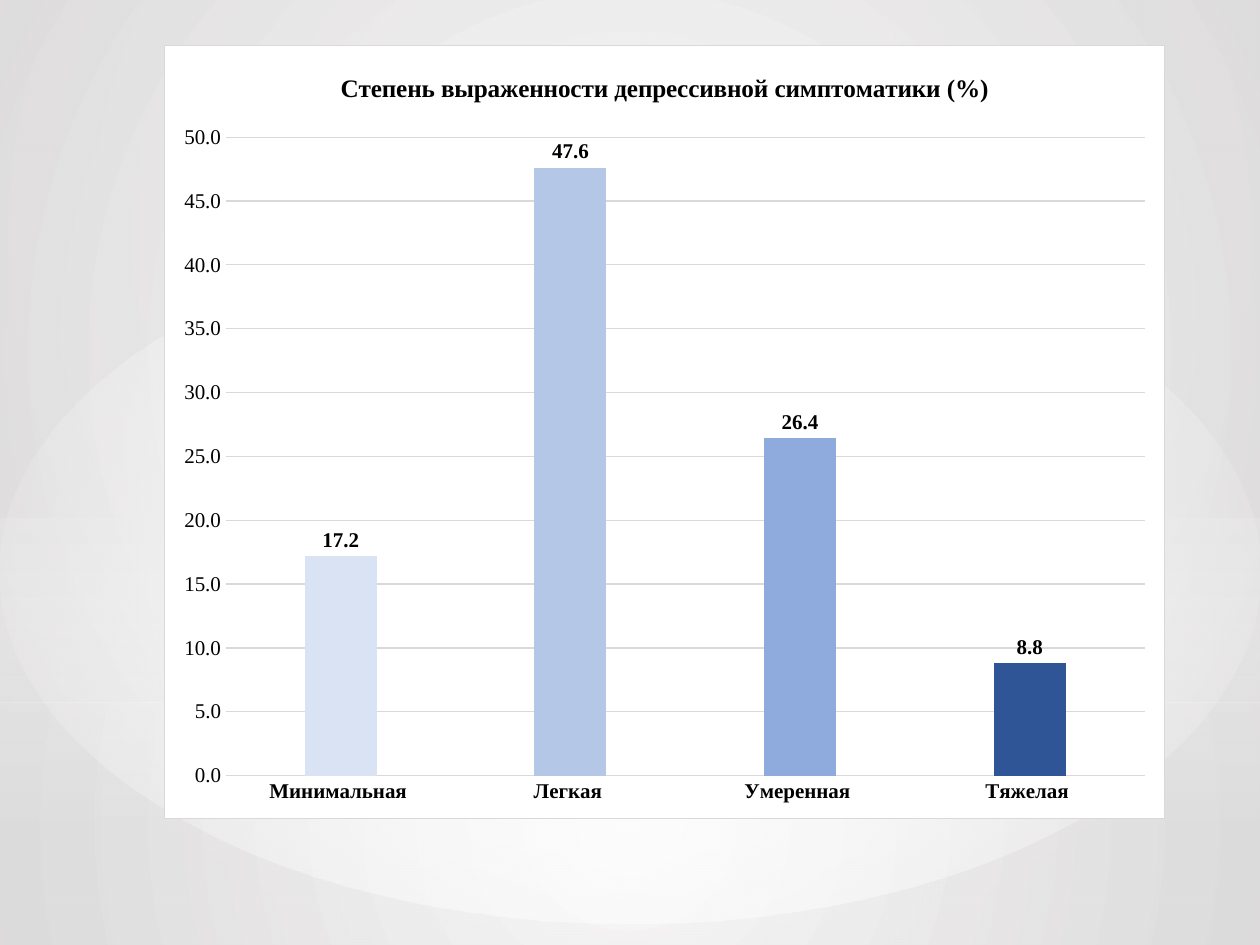
from pptx import Presentation, util as u
from pptx.chart.data import CategoryChartData
from pptx.dml.color import RGBColor
from pptx.enum import chart as ch, shapes
from pptx.oxml import parse_xml
from pptx.oxml.ns import nsdecls


def rgb(h):
    return RGBColor.from_string(h)


def set_gradient(fill, root, stops, direction):
    """Stops are (position %, colour, opacity %); direction is an angle or a focus box in %."""
    fill.gradient()
    grad = root.xpath(".//a:gradFill")[0]
    for child in list(grad):
        grad.remove(child)
    gs = "".join(f'<a:gs pos="{p * 1000}"><a:srgbClr val="{c}"><a:alpha val="{a * 1000}"/>'
                 f'</a:srgbClr></a:gs>' for p, c, a in stops)
    grad.append(parse_xml(f'<a:gsLst {nsdecls("a")}>{gs}</a:gsLst>'))
    if isinstance(direction, int):
        xml = f'<a:lin {nsdecls("a")} ang="{direction * 60000}" scaled="0"/>'
    else:
        box = " ".join(f'{k}="{v * 1000}"' for k, v in zip("ltrb", direction))
        xml = f'<a:path {nsdecls("a")} path="circle"><a:fillToRect {box}/></a:path>'
    grad.append(parse_xml(xml))


prs = Presentation()
prs.slide_width, prs.slide_height = u.Cm(25.4), u.Cm(19.05)
s = prs.slides.add_slide(prs.slide_layouts[6])

# Background
set_gradient(s.background.fill, s.element,
             [(0, "DDDCDC", 100), (100, "BAB6B6", 100)], (50, 25, 50, 75))

# Full-width light bands and glow: shape, top, height, stops, direction
RECT, OVAL = shapes.MSO_SHAPE.RECTANGLE, shapes.MSO_SHAPE.OVAL
center = (50, 50, 50, 50)
for kind, top, height, stops, direction in [
    (RECT, 14.17, 4.88, [(0, "FFFFFF", 91), (100, "E7E6E6", 79)], center),
    (RECT, 0, 14.17, [(0, "FFFFFF", 89), (100, "E7E6E6", 79)], center),
    (RECT, 10.46, 6.35, [(0, "E7E6E6", 60), (100, "FFFFFF", 0)], 90),
    (OVAL, 4.45, 14.17, [(0, "FFFFFF", 100), (100, "FFFFFF", 0)], center),
]:
    sp = s.shapes.add_shape(kind, 0, u.Cm(top), prs.slide_width, u.Cm(height))
    sp.shadow.inherit = False
    sp.line.fill.background()
    set_gradient(sp.fill, sp.element, stops, direction)

# Chart data
data = CategoryChartData(number_format="0.0")
data.categories = ["Минимальная ", "Легкая ", "Умеренная ", "Тяжелая "]
data.add_series("Series 1", [17.2, 47.6, 26.4, 8.8])
chart = s.shapes.add_chart(ch.XL_CHART_TYPE.COLUMN_CLUSTERED, u.Cm(3.3), u.Cm(0.91),
                           u.Cm(20.19), u.Cm(15.6), data).chart
chart.has_legend = False
chart.font.name, chart.font.size = "Arial", u.Pt(10)

# Chart area: white with a thin grey border and square corners
cs = chart.element
cs.xpath("c:txPr")[0].addprevious(parse_xml(
    f'<c:spPr {nsdecls("c", "a")}><a:solidFill><a:srgbClr val="FFFFFF"/></a:solidFill>'
    '<a:ln w="9525"><a:solidFill><a:srgbClr val="D9D9D9"/></a:solidFill></a:ln></c:spPr>'))
cs.xpath("c:date1904")[0].addnext(parse_xml(f'<c:roundedCorners {nsdecls("c")} val="0"/>'))

# Title
chart.has_title = True
tf = chart.chart_title.text_frame
tf.text = "Степень выраженности депрессивной симптоматики (%)"
chart.chart_title.include_in_layout = False

# Columns and value labels
plot = chart.plots[0]
for name, value in {"gap_width": 219, "overlap": -27, "vary_by_categories": False,
                    "has_data_labels": False}.items():
    setattr(plot, name, value)
series = plot.series[0]
series.format.fill.solid()
series.format.fill.fore_color.rgb = rgb("4472C4")
for i, color in enumerate(["DAE3F3", "B4C7E7", "8FAADC", "2F5597"]):
    fill = series.points[i].format.fill
    fill.solid()
    fill.fore_color.rgb = rgb(color)
labels = series.data_labels
for name, value in {"show_value": True, "number_format": "0.0",
                    "number_format_is_linked": False,
                    "position": ch.XL_LABEL_POSITION.OUTSIDE_END}.items():
    setattr(labels, name, value)

# Axes
cat, val = chart.category_axis, chart.value_axis
for axis in (cat, val):
    axis.major_tick_mark = axis.minor_tick_mark = ch.XL_TICK_MARK.NONE
for name, value in {"minimum_scale": 0, "maximum_scale": 50, "major_unit": 5,
                    "has_major_gridlines": True}.items():
    setattr(val, name, value)
val.tick_labels.number_format = "0.0"
val.tick_labels.number_format_is_linked = False
val.format.line.fill.background()
for line in (cat.format.line, val.major_gridlines.format.line):
    line.color.rgb = rgb("D9D9D9")
    line.width = u.Pt(0.75)

# Chart fonts
for font, size, bold in [
    (tf.paragraphs[0].runs[0].font, 14.4, True),
    (labels.font, 12, True),
    (cat.tick_labels.font, 12, True),
    (val.tick_labels.font, 12, False),
]:
    fmt = {"name": "Times New Roman", "size": u.Pt(size), "bold": bold}
    for name, value in fmt.items():
        setattr(font, name, value)
    font.color.rgb = rgb("000000")

prs.save("out.pptx")
